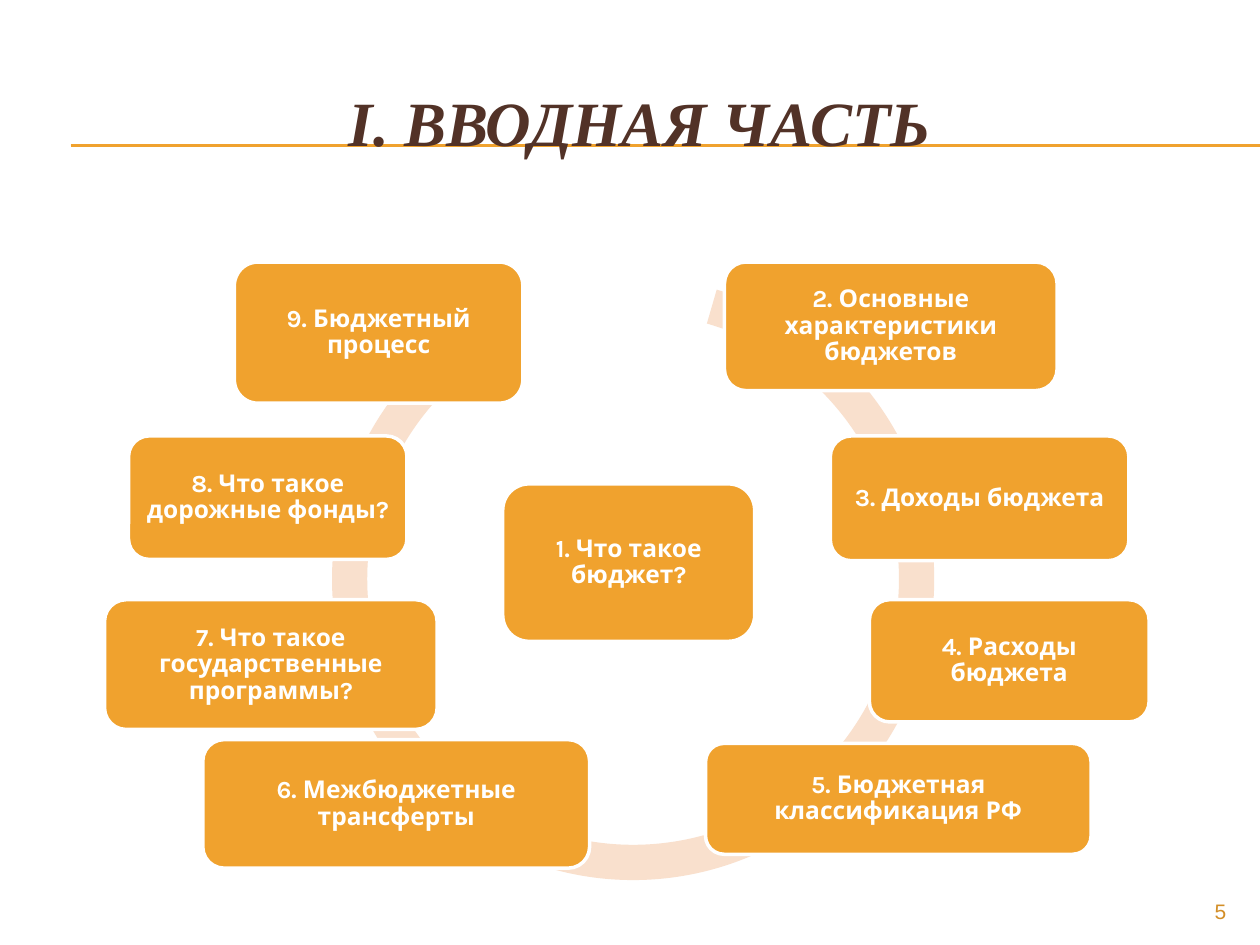
from dataclasses import dataclass

from lxml import etree
from pptx import Presentation
from pptx.dml.color import RGBColor
from pptx.enum.shapes import MSO_CONNECTOR, MSO_SHAPE
from pptx.enum.text import MSO_ANCHOR, PP_ALIGN
from pptx.oxml.ns import qn
from pptx.slide import Slide
from pptx.util import Inches, Pt

STRAIGHT = MSO_CONNECTOR.STRAIGHT
ROUNDED = MSO_SHAPE.ROUNDED_RECTANGLE
CIRCULAR_ARROW = MSO_SHAPE.CIRCULAR_ARROW
MIDDLE = MSO_ANCHOR.MIDDLE
CENTER = PP_ALIGN.CENTER
RIGHT = PP_ALIGN.RIGHT


@dataclass(frozen=True)
class Theme:
    accent: RGBColor = RGBColor.from_string("F0A22E")
    ring: RGBColor = RGBColor.from_string("F9E0CD")
    heading: RGBColor = RGBColor.from_string("523227")
    number: RGBColor = RGBColor.from_string("D38E27")
    white: RGBColor = RGBColor.from_string("FFFFFF")
    heading_font: str = "Times New Roman"
    topic_font: str = "Karla"
    number_font: str = "Arial"
    heading_size: Pt = Pt(36)
    topic_size: Pt = Pt(14)
    number_size: Pt = Pt(12)


@dataclass(frozen=True)
class Topic:
    text: str
    left: float
    top: float
    width: float
    height: float


THEME = Theme()
RULE_HEIGHTS = (1.15, 1.16)
TOPICS = (
    Topic("Что такое бюджет?", 3.99, 3.84, 2, 1.25),
    Topic("Основные характеристики бюджетов", 5.75, 2.08, 2.64, 1.02),
    Topic("Доходы бюджета", 6.59, 3.46, 2.37, 0.99),
    Topic("Расходы бюджета", 6.9, 4.76, 2.22, 0.97),
    Topic("Бюджетная классификация РФ", 5.6, 5.9, 3.06, 0.88),
    Topic("Межбюджетные трансферты", 1.61, 5.87, 3.07, 1.02),
    Topic("Что такое государственные программы?", 0.83, 4.76, 2.64, 1.03),
    Topic("Что такое дорожные фонды?", 1.02, 3.46, 2.21, 0.98),
    Topic("Бюджетный процесс", 1.86, 2.08, 2.29, 1.12),
)


def draw_rule(slide: Slide, height: float) -> None:
    rule = slide.shapes.add_connector(
        STRAIGHT, Inches(0.56), Inches(height), Inches(10), Inches(height)
    )
    rule.line.color.rgb = THEME.accent
    rule.line.width = Pt(0.75)
    etree.SubElement(rule.element.spPr, qn("a:effectLst"))


def draw_heading(slide: Slide, text: str) -> None:
    heading = slide.shapes.title
    heading.left, heading.top = Inches(0.33), Inches(0.5)
    heading.width, heading.height = Inches(9.5), Inches(0.92)
    heading.element.getparent().append(heading.element)
    frame = heading.text_frame
    frame.text = text
    frame.vertical_anchor = MIDDLE
    paragraph = frame.paragraphs[0]
    paragraph.alignment = CENTER
    font = paragraph.font
    font.name, font.size = THEME.heading_font, THEME.heading_size
    font.bold = font.italic = True
    font.color.rgb = THEME.heading


def draw_page_number(slide: Slide, number: int) -> None:
    page = slide.shapes.add_textbox(Inches(9), Inches(7.08), Inches(0.83), Inches(0.27))
    page.text_frame.word_wrap = True
    paragraph = page.text_frame.paragraphs[0]
    paragraph.text = str(number)
    paragraph.alignment = RIGHT
    font = paragraph.font
    font.name, font.size = THEME.number_font, THEME.number_size
    font.color.rgb = THEME.number


def draw_ring(slide: Slide) -> None:
    ring = slide.shapes.add_shape(
        CIRCULAR_ARROW, Inches(2.48), Inches(2.05), Inches(5.09), Inches(5.09)
    )
    for index, value in enumerate((0.055, 3.307, 141.418, 171.671, 0.058)):
        ring.adjustments[index] = value
    ring.shadow.inherit = False
    ring.fill.solid()
    ring.fill.fore_color.rgb = THEME.ring
    ring.line.fill.background()


def draw_topic(slide: Slide, number: int, topic: Topic) -> None:
    box = slide.shapes.add_shape(
        ROUNDED,
        Inches(topic.left),
        Inches(topic.top),
        Inches(topic.width),
        Inches(topic.height),
    )
    box.shadow.inherit = False
    box.fill.solid()
    box.fill.fore_color.rgb = THEME.accent
    box.line.color.rgb = THEME.white
    box.line.width = Pt(2)
    frame = box.text_frame
    frame.word_wrap = True
    frame.vertical_anchor = MIDDLE
    frame.margin_left = frame.margin_right = Inches(0.06)
    frame.margin_top = frame.margin_bottom = Inches(0.06)
    paragraph = frame.paragraphs[0]
    paragraph.text = f"{number}. {topic.text}"
    paragraph.alignment = CENTER
    paragraph.line_spacing = 0.9
    paragraph.space_after = Pt(5)
    font = paragraph.font
    font.name, font.size = THEME.topic_font, THEME.topic_size
    font.bold = True
    font.color.rgb = THEME.white


def main() -> None:
    deck = Presentation()
    deck.slide_width, deck.slide_height = Inches(10), Inches(7.5)
    slide = deck.slides.add_slide(deck.slide_layouts[5])
    for height in RULE_HEIGHTS:
        draw_rule(slide, height)
    draw_heading(slide, "I. ВВОДНАЯ ЧАСТЬ")
    draw_page_number(slide, 5)
    draw_ring(slide)
    for number, topic in enumerate(TOPICS, start=1):
        draw_topic(slide, number, topic)
    deck.save("out.pptx")


if __name__ == "__main__":
    main()
